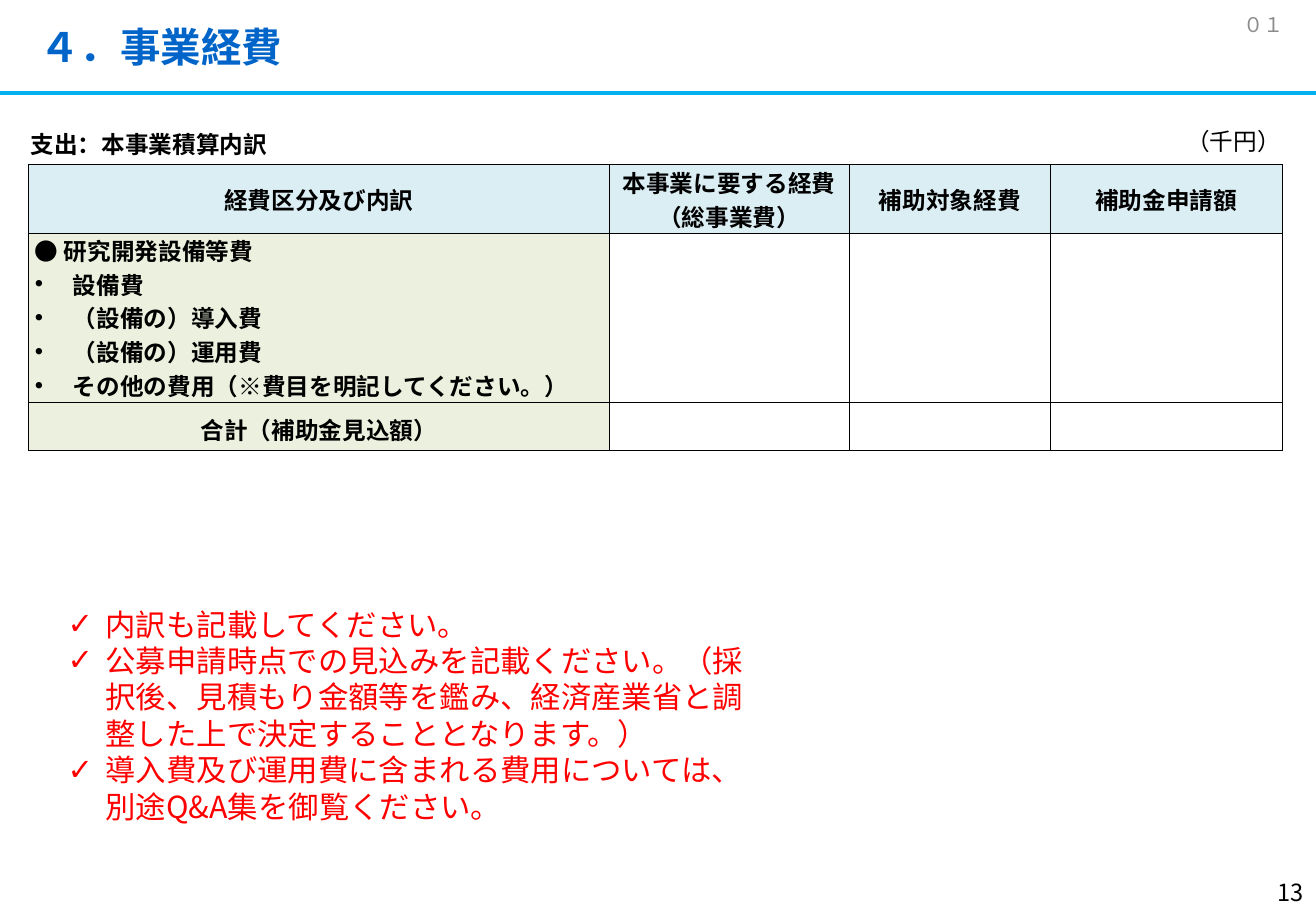
from dataclasses import dataclass

from lxml.etree import SubElement
from pptx import Presentation
from pptx.dml.color import RGBColor as RGB
from pptx.enum.shapes import MSO_CONNECTOR as Connector
from pptx.enum.text import MSO_ANCHOR as Anchor, MSO_AUTO_SIZE as AutoSize, PP_ALIGN as Align
from pptx.oxml.ns import qn
from pptx.util import Pt


@dataclass(frozen=True)
class Theme:
    font: str = "Noto Sans CJK JP"
    table_font: str = "Arial"
    title: str = "0064C8"
    rule: str = "00B0F0"
    text: str = "000000"
    muted: str = "8C8C8C"
    note: str = "FF0000"
    head_fill: str = "DBEEF4"
    label_fill: str = "EBF1DE"
    blank_fill: str = "FFFFFF"
    title_size: int = 24
    note_size: int = 18
    body_size: int = 14
    small_size: int = 12


theme = Theme()


def style(para, size, color, bold=False, align=Align.LEFT, font=theme.font):
    para.alignment = align
    para.font.name = font
    para.font.size = Pt(size)
    para.font.bold = bold
    para.font.color.rgb = RGB.from_string(color)
    defaults = para._p.pPr.find(qn("a:defRPr"))
    SubElement(defaults, qn("a:ea"), typeface=theme.font)


def add_bullet(para, mark, indent=22.5):
    props = para._p.pPr
    props.set("marL", str(Pt(indent)))
    props.set("indent", str(-Pt(indent)))
    defaults = props.find(qn("a:defRPr"))
    for tag, key, value in (("a:buFont", "typeface", theme.table_font), ("a:buChar", "char", mark)):
        bullet = SubElement(props, qn(tag))
        bullet.set(key, value)
        defaults.addprevious(bullet)


deck = Presentation()
deck.slide_width, deck.slide_height = Pt(780), Pt(540)
page = deck.slides.add_slide(deck.slide_layouts[5])

# Title and rule
title = page.shapes.title
title.left, title.top, title.width, title.height = Pt(16), Pt(9.5), Pt(749), Pt(36)
title.text_frame.text = "４．事業経費"
title.text_frame.vertical_anchor = Anchor.MIDDLE
title.text_frame.auto_size = AutoSize.NONE
style(title.text_frame.paragraphs[0], theme.title_size, theme.title, bold=True)

rule = page.shapes.add_connector(Connector.STRAIGHT, Pt(0), Pt(55), Pt(780), Pt(55))
rule.line.color.rgb = RGB.from_string(theme.rule)
rule.line.width = Pt(2.25)
SubElement(rule._element.spPr, qn("a:effectLst"))

# Cost table
rows = [
    [["経費区分及び内訳"], ["本事業に要する経費", "（総事業費）"], ["補助対象経費"], ["補助金申請額"]],
    [["● 研究開発設備等費", "設備費", "（設備の）導入費", "（設備の）運用費",
      "その他の費用（※費目を明記してください。）"], [], [], []],
    [["合計（補助金見込額）"], [], [], []],
]
widths = [344, 142.5, 119, 137.5]
heights = [39.6, 100, 28.8]
frame = page.shapes.add_table(len(rows), len(widths), Pt(17), Pt(97.5), Pt(sum(widths)), Pt(sum(heights)))
table = frame.table
for column, width in zip(table.columns, widths):
    column.width = Pt(width)
for row, height in zip(table.rows, heights):
    row.height = Pt(height)

for r, row in enumerate(rows):
    for c, lines in enumerate(row):
        cell = table.cell(r, c)
        cell.margin_left = cell.margin_right = Pt(3.6)
        cell.margin_top = cell.margin_bottom = Pt(0)
        cell.vertical_anchor = Anchor.TOP if r == 1 else Anchor.MIDDLE
        for side in ("a:lnL", "a:lnR", "a:lnT", "a:lnB"):
            border = SubElement(cell._tc.tcPr, qn(side), w=str(Pt(0.5)))
            SubElement(SubElement(border, qn("a:solidFill")), qn("a:srgbClr"), val=theme.text)
        fill = theme.head_fill if r == 0 else theme.label_fill if c == 0 else theme.blank_fill
        cell.fill.solid()
        cell.fill.fore_color.rgb = RGB.from_string(fill)
        cell.text_frame.text = "\n".join(lines)
        for i, para in enumerate(cell.text_frame.paragraphs):
            align = Align.JUSTIFY if r == 1 else Align.CENTER
            style(para, theme.body_size, theme.text, True, align, theme.table_font)
            if r == 1 and lines:
                para.line_spacing = Pt(20)
                if i > 0:
                    add_bullet(para, "•")

# The total sits a little below the middle of its row
total = table.cell(2, 0)
total.margin_top = Pt(6)
total.text_frame.paragraphs[0].line_spacing = Pt(17)

# Labels, page marks and notes
notes = [
    "内訳も記載してください。",
    "公募申請時点での見込みを記載ください。（採択後、見積もり金額等を鑑み、経済産業省と調整した上で決定することとなります。）",
    "導入費及び運用費に含まれる費用については、別途Q&A集を御覧ください。",
]
top, middle = Anchor.TOP, Anchor.MIDDLE
boxes = [
    # lines, (left, top, width, height), size, colour, bold, align, anchor, bullet
    (["支出：本事業積算内訳"], (11, 73.5, 268, 24.5), theme.body_size, theme.text, True, Align.LEFT, top, None),
    (["（千円）"], (696, 71.5, 81, 24.5), theme.body_size, theme.text, False, Align.LEFT, top, None),
    (["０１"], (730, 0, 50, 29), theme.small_size, theme.muted, False, Align.LEFT, middle, None),
    (["13"], (730, 517, 50, 23), theme.body_size, theme.text, False, Align.RIGHT, middle, None),
    (notes, (33, 355.5, 425.5, 138), theme.note_size, theme.note, False, Align.LEFT, top, "✓"),
]
for lines, place, size, color, bold, align, anchor, mark in boxes:
    box = page.shapes.add_textbox(*map(Pt, place))
    box.text_frame.word_wrap = True
    box.text_frame.vertical_anchor = anchor
    box.text_frame.text = "\n".join(lines)
    for para in box.text_frame.paragraphs:
        style(para, size, color, bold, align)
        if mark:
            add_bullet(para, mark)

deck.save("out.pptx")
